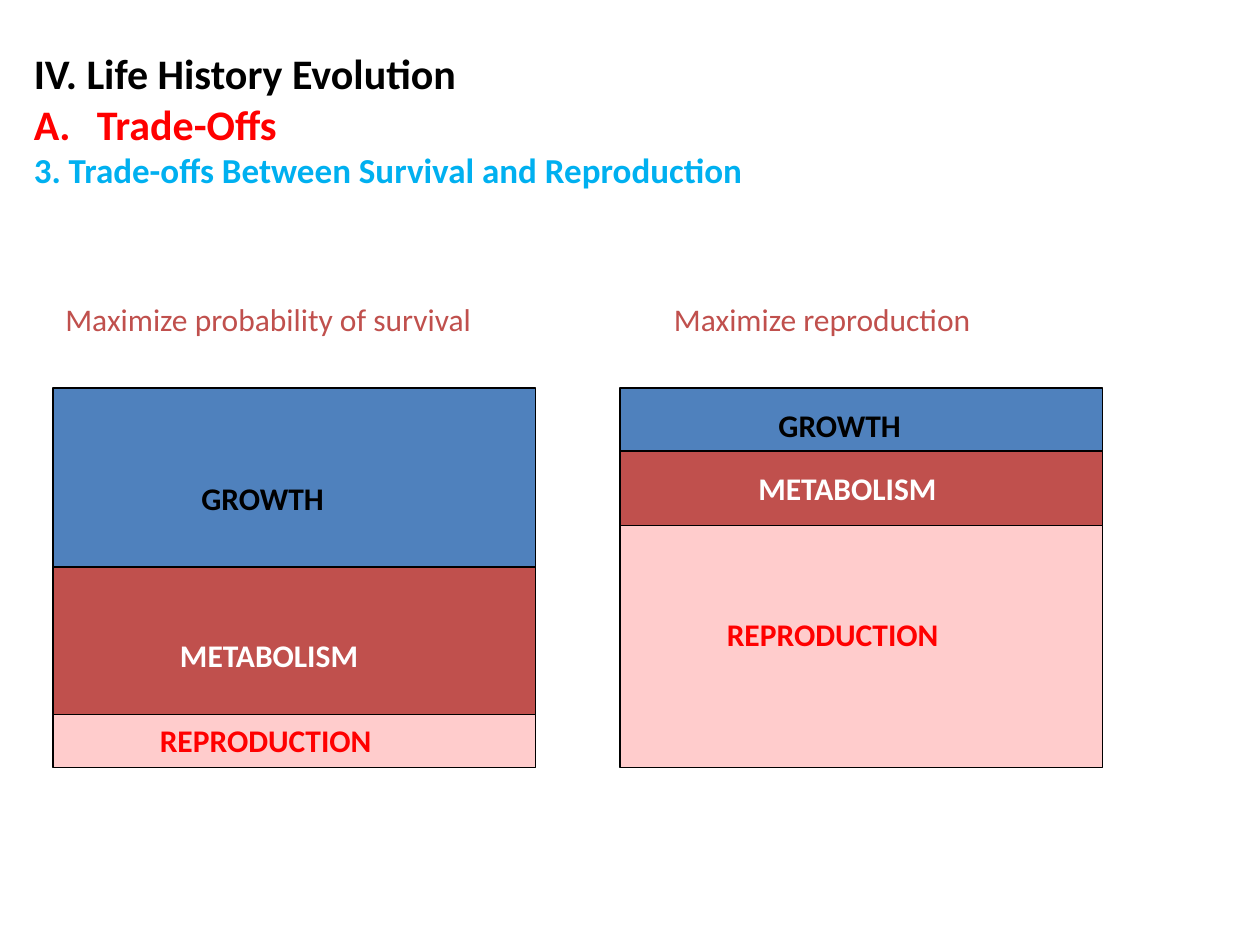
from dataclasses import dataclass

from lxml.etree import SubElement
from pptx import Presentation
from pptx.dml.color import RGBColor as Rgb
from pptx.enum.shapes import MSO_SHAPE as Shape
from pptx.oxml.ns import qn
from pptx.util import Inches, Pt


@dataclass(frozen=True)
class Theme:
    font: str = "Calibri"
    black: str = "000000"
    white: str = "FFFFFF"
    red: str = "FF0000"
    sky: str = "00B0F0"
    blue: str = "4F81BD"
    brick: str = "C0504D"
    pink: str = "FFCCCC"
    heading: int = 24
    subheading: int = 20
    label: int = 18
    outline: float = 0.75


THEME = Theme()
BAR_WIDTH = 3.83
LABEL_HEIGHT = 0.4

# Name: fill, text colour, label width
PARTS = {
    "GROWTH": (THEME.blue, THEME.black, 1.58),
    "METABOLISM": (THEME.brick, THEME.white, 2.58),
    "REPRODUCTION": (THEME.pink, THEME.red, 2.5),
}

# Title, title left, bar left, then for each part: top, height, label left, label top
STRATEGIES = [
    ("Maximize probability of survival", 0.42, 0.42,
     [(3.08, 1.58, 1.5, 3.75), (4.5, 1.17, 1.33, 5), (5.67, 0.42, 1.17, 5.67)]),
    ("Maximize reproduction", 5.25, 4.92,
     [(3.08, 0.5, 6.08, 3.17), (3.58, 0.75, 5.92, 3.67), (4.17, 1.92, 5.67, 4.83)]),
]


def style(para, size, color, bold):
    para.font.name = THEME.font
    para.font.size = Pt(size)
    para.font.bold = bold
    para.font.color.rgb = Rgb.from_string(color)


def add_text_frame(page, left, top, width, height):
    box = page.shapes.add_textbox(Inches(left), Inches(top), Inches(width), Inches(height))
    box.text_frame.word_wrap = True
    return box.text_frame


def add_label(page, text, left, top, width, color, bold=True):
    para = add_text_frame(page, left, top, width, LABEL_HEIGHT).paragraphs[0]
    para.text = text
    style(para, THEME.label, color, bold)


def add_block(page, left, top, height, fill):
    block = page.shapes.add_shape(
        Shape.RECTANGLE, Inches(left), Inches(top), Inches(BAR_WIDTH), Inches(height))
    block.shadow.inherit = False
    block.fill.solid()
    block.fill.fore_color.rgb = Rgb.from_string(fill)
    block.line.color.rgb = Rgb.from_string(THEME.black)
    block.line.width = Pt(THEME.outline)


def add_outline(page):
    frame = add_text_frame(page, 0.17, 0.33, 9.5, 1.92)
    lines = [
        ("IV. Life History Evolution", THEME.heading, THEME.black, False, False),
        ("Trade-Offs", THEME.heading, THEME.red, True, True),
        ("3. Trade-offs Between Survival and Reproduction",
         THEME.subheading, THEME.sky, True, False),
    ]
    for index, (text, size, color, hanging, lettered) in enumerate(lines):
        para = frame.add_paragraph() if index else frame.paragraphs[0]
        para.text = text
        if hanging:
            props = para._p.get_or_add_pPr()
            props.set("marL", str(Inches(0.5)))
            props.set("indent", str(Inches(-0.5)))
            if lettered:
                SubElement(props, qn("a:buAutoNum"), type="alphaUcPeriod")
        style(para, size, color, True)


def add_strategy(page, title, title_left, bar_left, places):
    for (name, part), place in zip(PARTS.items(), places):
        fill, color, label_width = part
        top, height, label_left, label_top = place
        add_block(page, bar_left, top, height, fill)
        add_label(page, name, label_left, label_top, label_width, color)
    add_label(page, title, title_left, 2.33, 3.75, THEME.brick, bold=False)


def main():
    deck = Presentation()
    deck.slide_width, deck.slide_height = Inches(10), Inches(7.5)
    page = deck.slides.add_slide(deck.slide_layouts[6])

    # Outline headings
    add_outline(page)

    # One energy budget bar per strategy
    for strategy in STRATEGIES:
        add_strategy(page, *strategy)

    deck.save("out.pptx")


if __name__ == "__main__":
    main()
